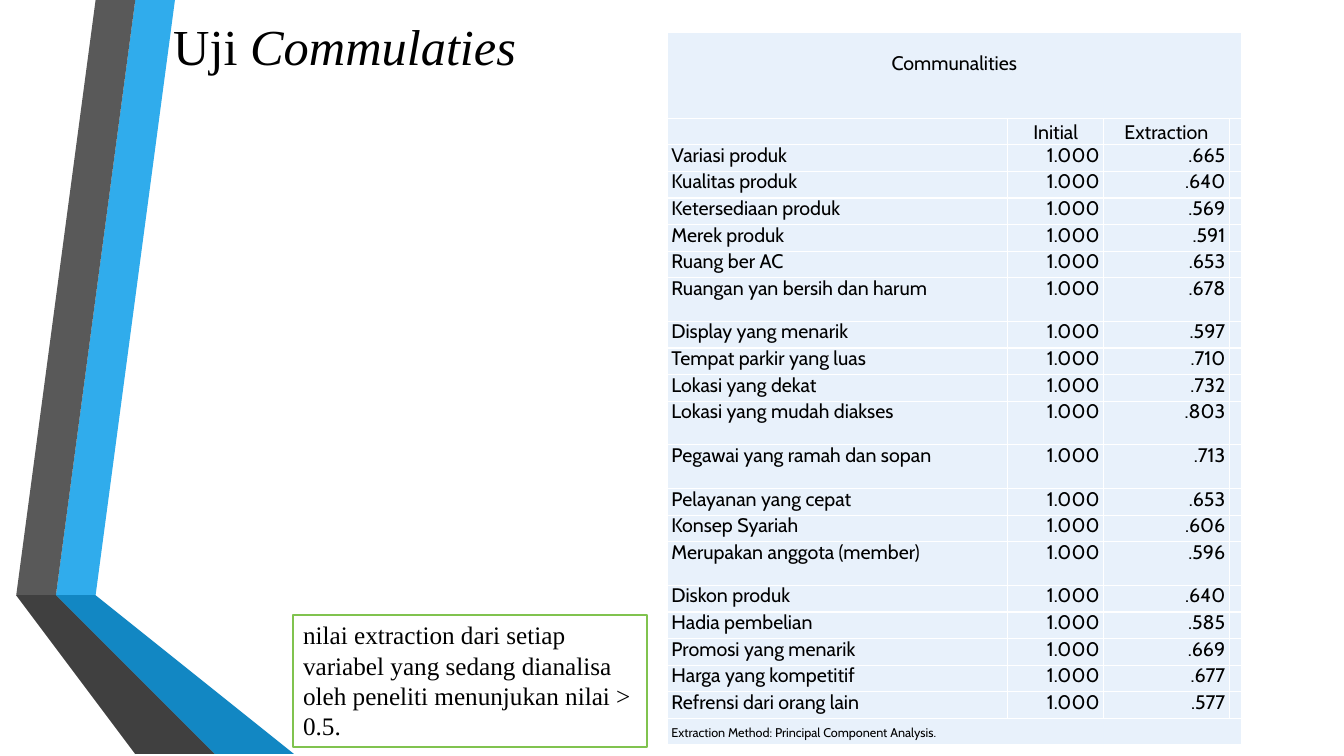
from lxml import etree
from pptx import Presentation, util as u
from pptx.dml.color import RGBColor
from pptx.enum import shapes, text
from pptx.oxml.ns import qn

BLACK = RGBColor(0, 0, 0)
WHITE = RGBColor(0xFF, 0xFF, 0xFF)
PALE_BLUE = RGBColor(0xE8, 0xF1, 0xFB)
GREEN = RGBColor(0x80, 0xC3, 0x4F)
SKY = RGBColor(0x30, 0xAC, 0xEC)
BLUE = RGBColor(0x12, 0x87, 0xC3)
NAVY = RGBColor(0x0C, 0x5A, 0x82)
GREY = RGBColor(0x59, 0x59, 0x59)
DARK_GREY = RGBColor(0x40, 0x40, 0x40)
CHARCOAL = RGBColor(0x26, 0x26, 0x26)

SERIF = "Times New Roman"
SANS = "Cabin"

# Ribbon outlines in cm, relative to the ribbon's top left corner
RIBBON = [
    (SKY, [(0.86, 14.68), (1.55, 14.81), (3.98, 0), (3.27, 0)]),
    (GREY, [(3.12, 0), (2.41, 0), (0, 14.55), (0.71, 14.66)]),
    (CHARCOAL, [(0, 14.55), (3.27, 19.05), (3.43, 19.05)]),
    (NAVY, [(0.86, 14.71), (4.87, 19.05), (5.03, 19.05)]),
    (BLUE, [(0.86, 14.68), (5.03, 19.05), (6.78, 19.05), (1.55, 14.81)]),
    (DARK_GREY, [(4.72, 19.05), (0.81, 14.71), (0.71, 14.66), (0, 14.55),
                 (3.43, 19.05)]),
]

EXTRACTIONS = [
    ("Variasi produk", ".665"),
    ("Kualitas produk", ".640"),
    ("Ketersediaan produk", ".569"),
    ("Merek produk", ".591"),
    ("Ruang ber AC", ".653"),
    ("Ruangan yan bersih dan harum", ".678"),
    ("Display yang menarik", ".597"),
    ("Tempat parkir yang luas", ".710"),
    ("Lokasi yang dekat", ".732"),
    ("Lokasi yang mudah diakses", ".803"),
    ("Pegawai yang ramah dan sopan", ".713"),
    ("Pelayanan yang cepat", ".653"),
    ("Konsep Syariah", ".606"),
    ("Merupakan anggota (member)", ".596"),
    ("Diskon produk", ".640"),
    ("Hadia pembelian", ".585"),
    ("Promosi yang menarik", ".669"),
    ("Harga yang kompetitif", ".677"),
    ("Refrensi dari orang lain", ".577"),
]
TALL_ROWS = {"Ruangan yan bersih dan harum", "Lokasi yang mudah diakses",
             "Pegawai yang ramah dan sopan", "Merupakan anggota (member)"}
COLUMN_WIDTHS = [8.58, 2.41, 3.17, 0.1]


def set_font(font, name, size):
    font.name, font.size, font.color.rgb = name, u.Pt(size), BLACK


def draw_ribbon(slide, left, top):
    for color, points in RIBBON:
        outline = slide.shapes.build_freeform(*points[0], scale=u.Cm(1))
        outline.add_line_segments(points[1:], close=True)
        band = outline.convert_to_shape(u.Cm(left), u.Cm(top))
        band.shadow.inherit = False
        band.fill.solid()
        band.fill.fore_color.rgb = color
        band.line.fill.background()


def place_title(slide, left, top, width, height):
    title = slide.shapes.title
    title.left, title.top = u.Cm(left), u.Cm(top)
    title.width, title.height = u.Cm(width), u.Cm(height)
    title.text_frame.vertical_anchor = text.MSO_ANCHOR.MIDDLE
    heading = title.text_frame.paragraphs[0]
    heading.alignment = text.PP_ALIGN.LEFT
    set_font(heading.font, SERIF, 36)
    heading.add_run().text = "Uji "
    term = heading.add_run()
    term.text = "Commulaties"
    term.font.italic = True
    # The title lies in front of the ribbon
    slide.shapes._spTree.append(title._element)


def add_borders(cell):
    props = cell._tc.get_or_add_tcPr()
    for index, side in enumerate(("a:lnL", "a:lnR", "a:lnT", "a:lnB")):
        border = etree.Element(qn(side), w=str(u.Pt(1)))
        fill = etree.SubElement(border, qn("a:solidFill"))
        etree.SubElement(fill, qn("a:srgbClr"), val=str(WHITE))
        props.insert(index, border)


def format_cell(cell, wording, align, anchor, size, margin):
    cell.margin_left = cell.margin_right = u.Cm(margin)
    cell.margin_top = cell.margin_bottom = 0
    cell.vertical_anchor = anchor
    cell.fill.solid()
    cell.fill.fore_color.rgb = PALE_BLUE
    add_borders(cell)
    line = cell.text_frame.paragraphs[0]
    line.alignment = align
    line.line_spacing = u.Pt(16)
    set_font(line.font, SANS, size)
    if wording:
        line.add_run().text = wording


def draw_communalities(slide, left, top, width, height):
    rows = [["Communalities", "", "", ""], ["", "Initial", "Extraction", ""]]
    rows += [[name, "1.000", value, ""] for name, value in EXTRACTIONS]
    rows.append(["Extraction Method: Principal Component Analysis.", "", "", ""])
    last = len(rows) - 1
    table = slide.shapes.add_table(len(rows), 4, u.Cm(left), u.Cm(top),
                                   u.Cm(width), u.Cm(height)).table
    table.first_row = table.horz_banding = False
    for column, column_width in zip(table.columns, COLUMN_WIDTHS):
        column.width = u.Cm(column_width)

    for r, row in enumerate(rows):
        tall = row[0] in TALL_ROWS
        table.rows[r].height = u.Cm(2.16 if r == 0 else 1.1 if tall else 0.67)
        for c, wording in enumerate(row):
            align, anchor = text.PP_ALIGN.LEFT, text.MSO_ANCHOR.TOP
            if r < 2:
                align = text.PP_ALIGN.CENTER
                anchor = text.MSO_ANCHOR.BOTTOM if r else text.MSO_ANCHOR.MIDDLE
            elif c in (1, 2):
                align = text.PP_ALIGN.RIGHT
            format_cell(table.cell(r, c), wording, align, anchor,
                        9 if r == last else 14, 0 if c == 3 else 0.1)

    # Heading and footnote run across the table
    for r in (0, last):
        table.cell(r, 0).merge(table.cell(r, 3))
    table.cell(0, 0).margin_bottom = u.Pt(16)


def draw_conclusion(slide, left, top, width, height):
    conclusion = slide.shapes.add_shape(
        shapes.MSO_SHAPE.RECTANGLE, u.Cm(left), u.Cm(top), u.Cm(width), u.Cm(height))
    conclusion.shadow.inherit = False
    conclusion.fill.solid()
    conclusion.fill.fore_color.rgb = WHITE
    conclusion.line.color.rgb = GREEN
    conclusion.line.width = u.Pt(1.25)
    frame = conclusion.text_frame
    frame.word_wrap = True
    frame.auto_size = text.MSO_AUTO_SIZE.SHAPE_TO_FIT_TEXT
    frame.vertical_anchor = text.MSO_ANCHOR.TOP
    finding = frame.paragraphs[0]
    finding.alignment = text.PP_ALIGN.LEFT
    set_font(finding.font, SERIF, 18)
    finding.add_run().text = ("nilai extraction dari setiap variabel yang sedang "
                              "dianalisa oleh peneliti menunjukan nilai > 0.5.")


def main():
    deck = Presentation()
    deck.slide_width, deck.slide_height = u.Cm(33.87), u.Cm(19.05)
    slide = deck.slides.add_slide(deck.slide_layouts[5])
    draw_ribbon(slide, 0.41, 0)
    place_title(slide, 4.11, -1.3, 27.84, 4.88)
    draw_communalities(slide, 16.82, 0.82, 14.26, 17.95)
    draw_conclusion(slide, 7.39, 15.49, 8.92, 3.33)
    deck.save("out.pptx")


if __name__ == "__main__":
    main()
